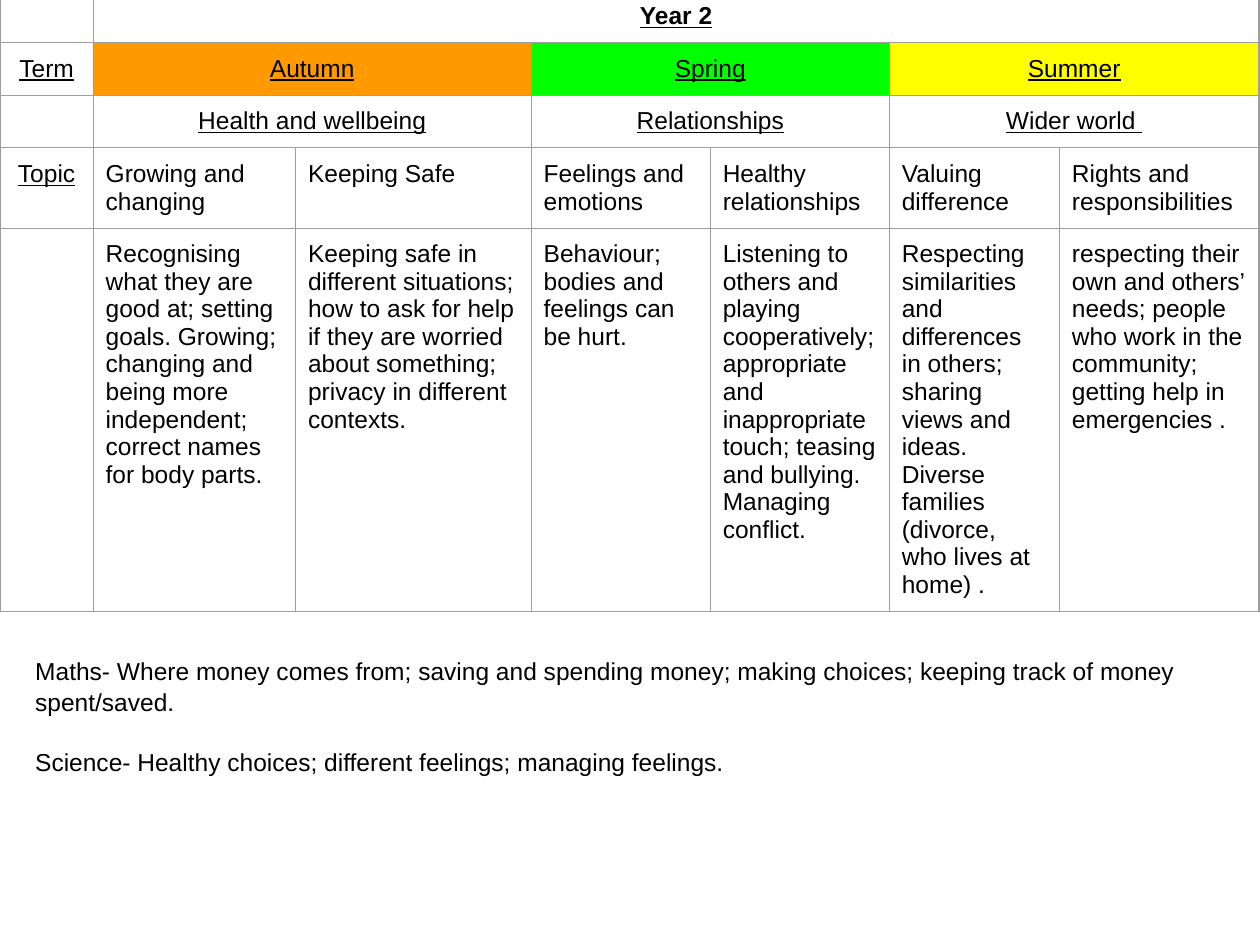
from lxml import etree
from pptx import Presentation
from pptx.dml.color import RGBColor
from pptx.enum.text import PP_ALIGN as Align
from pptx.oxml.ns import qn
from pptx.util import Cm, Pt

BLACK, GREY = "000000", "9E9E9E"
INSET = 0.25


def rgb(value):
    return RGBColor.from_string(value)


class Deck:
    """Holds the text style and the current slide."""
    font, size = "Arial", 14

    def __init__(self, prs):
        self.s = prs.slides.add_slide(prs.slide_layouts[6])

    def inset(self, box):
        box.margin_left = box.margin_right = Cm(INSET)
        box.margin_top = box.margin_bottom = Cm(INSET)

    def run(self, p, text, bold=False, underline=False):
        r = p.add_run()
        r.text = text
        r.font.name, r.font.size = self.font, Pt(self.size)
        r.font.bold, r.font.underline = bold, underline
        r.font.color.rgb = rgb(BLACK)

    def border(self, cell):
        tc_pr = cell._tc.get_or_add_tcPr()
        for side in ("a:lnL", "a:lnR", "a:lnT", "a:lnB"):
            ln = etree.SubElement(tc_pr, qn(side), w=str(Pt(0.75)))
            fill = etree.SubElement(ln, qn("a:solidFill"))
            etree.SubElement(fill, qn("a:srgbClr"), val=GREY)

    def table(self, left, top, widths, heights):
        frame = self.s.shapes.add_table(len(heights), len(widths), Cm(left), Cm(top),
                                        Cm(sum(widths)), Cm(sum(heights)))
        table = frame.table
        table.first_row = table.horz_banding = False
        for col, width in zip(table.columns, widths):
            col.width = Cm(width)
        for row, height in zip(table.rows, heights):
            row.height = Cm(height)
        for cell in table.iter_cells():
            self.border(cell)
            cell.fill.background()
        return table

    def cell(self, table, row, col, text, span=1, fill=None, heading=False, bold=False):
        cell = table.cell(row, col)
        if span > 1:
            cell.merge(table.cell(row, col + span - 1))
        if fill:
            cell.fill.solid()
            cell.fill.fore_color.rgb = rgb(fill)
        self.inset(cell)
        p = cell.text_frame.paragraphs[0]
        p.alignment = Align.CENTER if heading else Align.LEFT
        self.run(p, text, bold, underline=heading)

    def text(self, left, top, width, height, lines, gap):
        tf = self.s.shapes.add_textbox(Cm(left), Cm(top), Cm(width), Cm(height)).text_frame
        tf.word_wrap = True
        self.inset(tf)
        for i, line in enumerate(lines):
            p = tf.add_paragraph() if i else tf.paragraphs[0]
            p.line_spacing = 1.05
            p.space_before = Pt(gap if i else 0)
            self.run(p, line)


TERMS = [
    ("Autumn", "FF9900", "Health and wellbeing"),
    ("Spring", "00FF00", "Relationships"),
    ("Summer", "FFFF00", "Wider world "),
]
TOPICS = [
    ("Growing and changing",
     "Recognising what they are good at; setting goals. Growing; changing and being more "
     "independent; correct names for body parts."),
    ("Keeping Safe",
     "Keeping safe in different situations; how to ask for help if they are worried about "
     "something; privacy in different contexts."),
    ("Feelings and emotions",
     "Behaviour; bodies and feelings can be hurt."),
    ("Healthy relationships",
     "Listening to others and playing cooperatively; appropriate and inappropriate touch; "
     "teasing and bullying. Managing conflict."),
    ("Valuing difference",
     "Respecting similarities and differences in others; sharing views and ideas. Diverse "
     "families (divorce, who lives at home) ."),
    ("Rights and responsibilities",
     "respecting their own and others’ needs; people who work in the community; getting "
     "help in emergencies ."),
]
LINKS = [
    "Maths- Where money comes from; saving and spending money; making choices; keeping track "
    "of money spent/saved.",
    "Science- Healthy choices; different feelings; managing feelings.",
]


def main():
    prs = Presentation()
    prs.slide_width, prs.slide_height = Cm(25.4), Cm(19.05)
    deck = Deck(prs)

    # Year plan grid
    plan = deck.table(0, -0.2, [1.88, 4.08, 4.75, 3.61, 3.61, 3.43, 4.02],
                      [1.06, 1.06, 1.06, 1.62, 7.72])

    # Headings
    deck.cell(plan, 0, 1, "Year 2", span=6, heading=True, bold=True)
    deck.cell(plan, 1, 0, "Term", heading=True)
    deck.cell(plan, 3, 0, "Topic", heading=True)

    # Terms and their themes, two columns each
    for i, (term, colour, theme) in enumerate(TERMS):
        col = 1 + 2 * i
        deck.cell(plan, 1, col, term, span=2, fill=colour, heading=True)
        deck.cell(plan, 2, col, theme, span=2, heading=True)

    # Topics and their content
    for col, (topic, content) in enumerate(TOPICS, 1):
        deck.cell(plan, 3, col, topic)
        deck.cell(plan, 4, col, content)

    # Links to other subjects
    deck.text(0.46, 12.95, 24.41, 1.7, LINKS, gap=16.8)

    prs.save("out.pptx")


if __name__ == "__main__":
    main()
